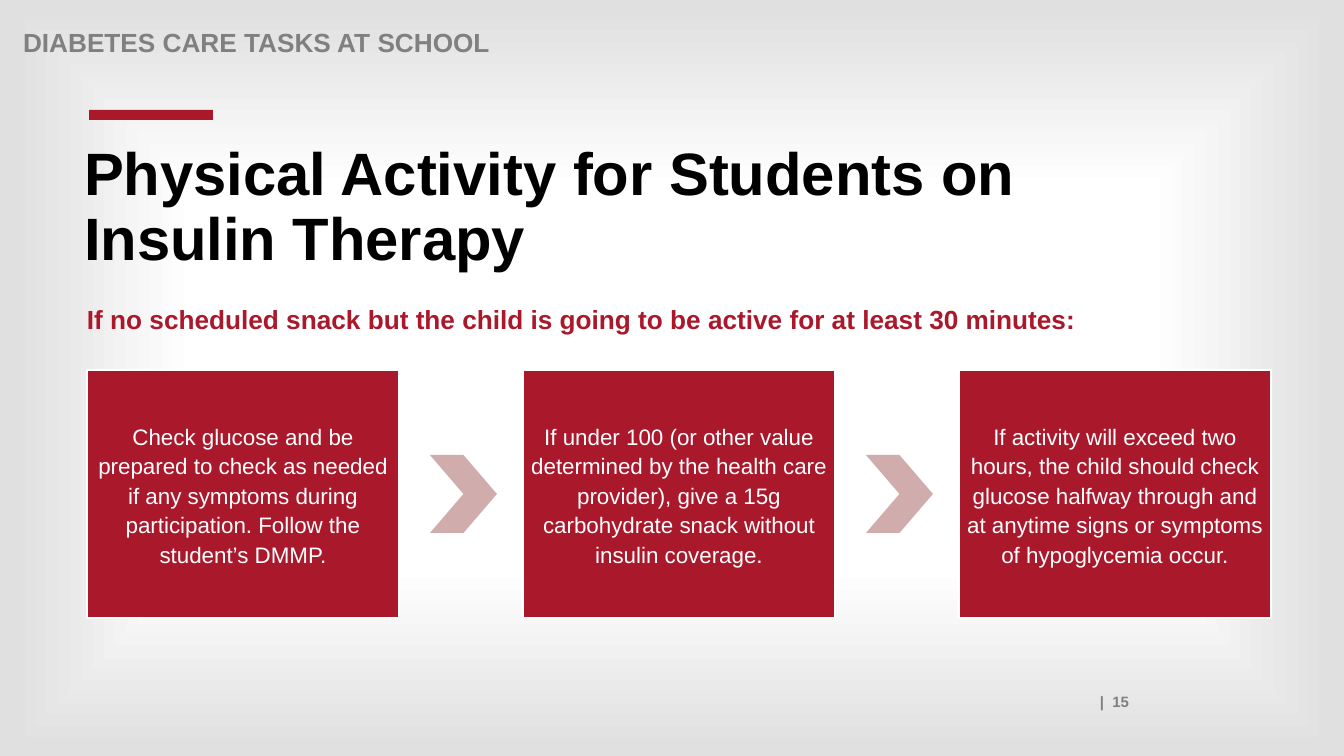
from lxml import etree
from pptx import Presentation
from pptx.dml.color import RGBColor
from pptx.enum.shapes import MSO_SHAPE
from pptx.enum.text import MSO_ANCHOR, PP_ALIGN
from pptx.oxml.ns import qn
from pptx.util import Emu, Pt

PX = 914400 / 100.8
COLORS = {
    "crimson": "AA182C",
    "rose": "D1ACAD",
    "gray": "808080",
    "edge": "E0E0E0",
    "white": "FFFFFF",
    "black": "000000",
}


def add_block(preset, box, fill, line=None):
    block = slide.shapes.add_shape(preset, *(Emu(round(v * PX)) for v in box))
    block.shadow.inherit = False
    block.fill.solid()
    block.fill.fore_color.rgb = RGBColor.from_string(COLORS[fill])
    if line:
        block.line.color.rgb = RGBColor.from_string(COLORS[line])
        block.line.width = Pt(1)
    else:
        block.line.fill.background()
    return block


def write(shape, text, size, color, bold=True, align=PP_ALIGN.LEFT, spacing=1.0, insets=(10, 5)):
    frame = shape.text_frame
    frame.word_wrap = True
    frame.margin_left = frame.margin_right = Emu(round(insets[0] * PX))
    frame.margin_top = frame.margin_bottom = Emu(round(insets[1] * PX))
    paragraph = frame.paragraphs[0]
    paragraph.alignment = align
    paragraph.line_spacing = spacing
    run = paragraph.add_run()
    run.text = text
    run.font.name = "Arial"
    run.font.size = Pt(size)
    run.font.bold = bold
    run.font.color.rgb = RGBColor.from_string(COLORS[color])


deck = Presentation()
deck.slide_width = Emu(round(1344 * PX))
deck.slide_height = Emu(round(756 * PX))
slide = deck.slides.add_slide(deck.slide_layouts[6])

slide.background.fill.gradient()
glow = slide.element.find(".//" + qn("a:gradFill"))
for child in list(glow):
    glow.remove(child)
stops = etree.SubElement(glow, qn("a:gsLst"))
for percent, color in [(12, "white"), (50, "white"), (98, "edge")]:
    stop = etree.SubElement(stops, qn("a:gs"), pos=str(percent * 1000))
    etree.SubElement(stop, qn("a:srgbClr"), val=COLORS[color])
spread = etree.SubElement(glow, qn("a:path"), {"path": "shape"})
etree.SubElement(spread, qn("a:fillToRect"), l="50000", t="50000", r="50000", b="50000")

add_block(MSO_SHAPE.RECTANGLE, (89, 110, 124, 10), "crimson")

headings = [
    ((122, 688, 1017, 28), "|  15", 10.7, "gray", PP_ALIGN.RIGHT, 1.0, (10, 5)),
    ((13, 25, 1109, 28), "DIABETES CARE TASKS AT SCHOOL", 18.7, "gray", PP_ALIGN.LEFT, 0.9, (10, 5)),
    ((87, 303, 1012, 31),
     "If no scheduled snack but the child is going to be active for at least 30 minutes:",
     18.7, "crimson", PP_ALIGN.LEFT, 1.0, (0, 0)),
    ((74, 139, 1112, 86), "Physical Activity for Students on Insulin Therapy",
     42.7, "black", PP_ALIGN.LEFT, 0.9, (10, 5)),
]
for box, text, size, color, align, spacing, insets in headings:
    heading = slide.shapes.add_textbox(*(Emu(round(v * PX)) for v in box))
    write(heading, text, size, color, align=align, spacing=spacing, insets=insets)

steps = [
    "Check glucose and be prepared to check as needed if any symptoms during participation. "
    "Follow the student’s DMMP.",
    "If under 100 (or other value determined by the health care provider), "
    "give a 15g carbohydrate snack without insulin coverage.",
    "If activity will exceed two hours, the child should check glucose halfway through "
    "and at anytime signs or symptoms of hypoglycemia occur.",
]
STEP_LEFT, STEP_PITCH = 87, 436
for index, instruction in enumerate(steps):
    left = STEP_LEFT + index * STEP_PITCH
    step = add_block(MSO_SHAPE.RECTANGLE, (left, 370, 312, 248), "crimson", "white")
    step.text_frame.vertical_anchor = MSO_ANCHOR.MIDDLE
    write(step, instruction, 16, "white", bold=False, align=PP_ALIGN.CENTER, spacing=1.1, insets=(7, 7))
    if index < len(steps) - 1:
        add_block(MSO_SHAPE.CHEVRON, (left + 343, 455, 67, 78), "rose")

deck.save("out.pptx")
